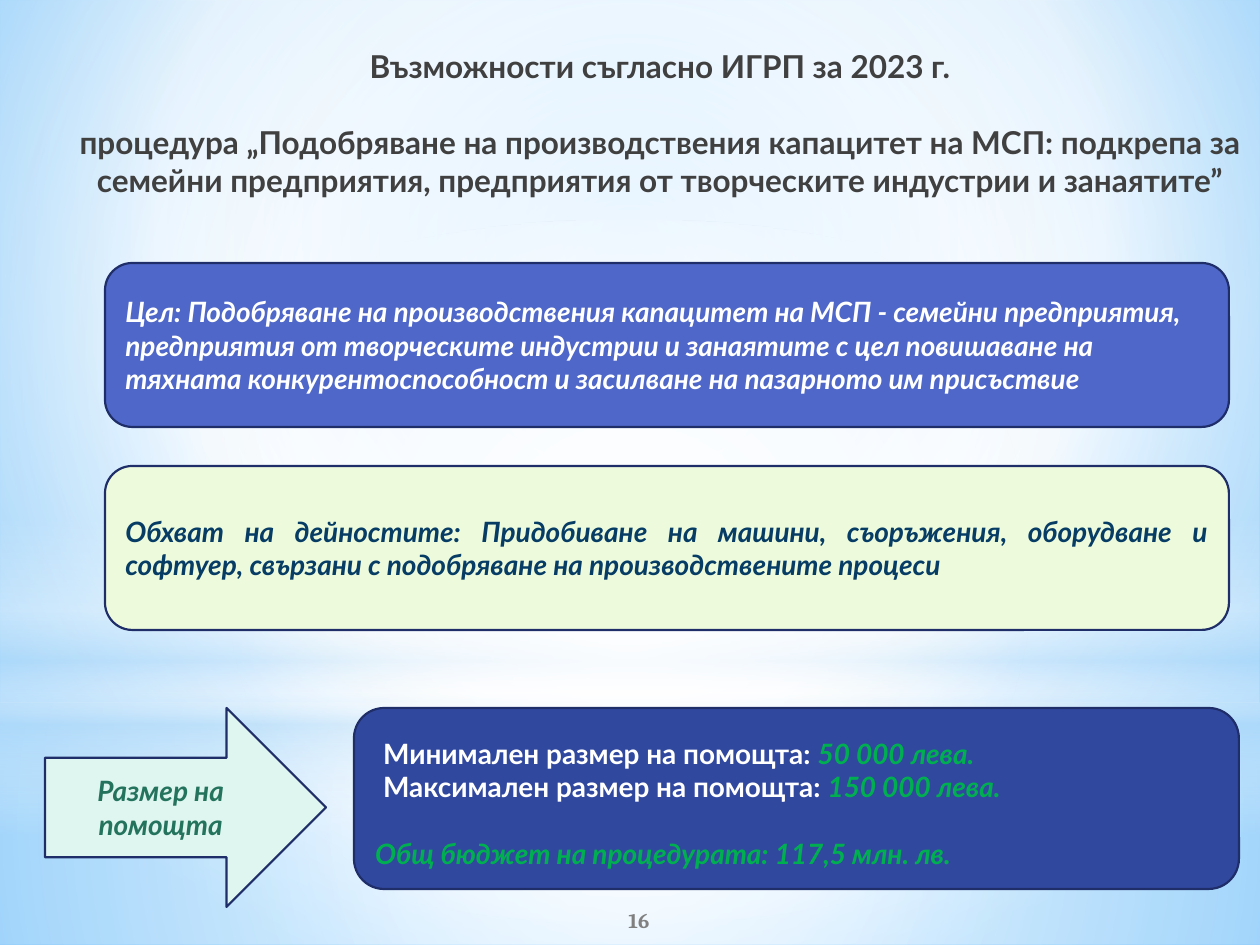
from lxml.etree import SubElement
from pptx import Presentation
from pptx.dml.color import RGBColor
from pptx.enum.shapes import MSO_SHAPE
from pptx.enum.text import MSO_ANCHOR, PP_ALIGN
from pptx.oxml.ns import qn
from pptx.util import Emu, Pt

SLIDE_SIZE = (1260, 945)
CENTER = (50, 50, 50, 50)
OUTLINE = "1F2E69"

BACKDROP = ([(0, "9ED5FF", 100), (60, "FFFFFF", 100), (100, "5BB9FF", 100)], (20, 10, 20, 60))
GLOWS = [
    (MSO_SHAPE.RECTANGLE, (0, 703, 1260, 242),
     [(0, "FFFFFF", 91), (37, "FFFFFF", 76), (100, "B4DCFA", 79)], CENTER),
    (MSO_SHAPE.RECTANGLE, (0, 0, 1260, 703),
     [(0, "FFFFFF", 89), (48, "FFFFFF", 62), (100, "B4DCFA", 79)], CENTER),
    (MSO_SHAPE.RECTANGLE, (0, 519, 1260, 315),
     [(0, "FFFFFF", 0), (29, "FFFFFF", 30), (45, "B4DCFA", 40),
      (55, "FFFFFF", 26), (65, "B4DCFA", 60), (100, "FFFFFF", 0)], None),
    (MSO_SHAPE.OVAL, (0, 220, 1260, 703),
     [(0, "FFFFFF", 100), (56, "FFFFFF", 0)], CENTER),
]

LATO = {"name": "Lato", "size": Pt(16), "bold": True, "color": "FFFFFF"}
ITALIC = {**LATO, "italic": True}
TITLE = {**LATO, "size": Pt(18), "color": "404040"}
GREEN = {**ITALIC, "color": "00B050"}
NUMBER = {**LATO, "name": "Cambria", "size": Pt(12), "color": "808080"}
LEFT = {"alignment": PP_ALIGN.LEFT}
CENTERED = {"alignment": PP_ALIGN.CENTER}
JUSTIFIED = {"alignment": PP_ALIGN.JUSTIFY}

PANELS = [
    (MSO_SHAPE.ROUNDED_RECTANGLE, (105, 263, 1124, 164), "4E67C8", {}, [
        (LEFT, 0, [("Цел: Подобряване на производствения капацитет на МСП - семейни предприятия, "
                    "предприятия от творческите индустрии и занаятите с цел повишаване на "
                    "тяхната конкурентоспособност и засилване на пазарното им присъствие", ITALIC)])]),
    (MSO_SHAPE.ROUNDED_RECTANGLE, (105, 466, 1124, 164), "EDFBDC", {}, [
        (JUSTIFIED, 0, [("Обхват на дейностите: Придобиване на машини, съоръжения, оборудване и "
                         "софтуер, свързани с подобряване на производствените процеси",
                         {**ITALIC, "color": "073C65"})])]),
    (MSO_SHAPE.RIGHT_ARROW, (45, 708, 281, 199), "DFF5EF", {}, [
        (CENTERED, 0, [("Размер на помощта", {**ITALIC, "color": "23735D"})])]),
    (MSO_SHAPE.ROUNDED_RECTANGLE, (354, 708, 885, 181), "31489F", {"margin_top": 16}, [
        (LEFT, 8, [("Минимален размер на помощта: ", LATO), ("50 000 лева.", GREEN)]),
        (LEFT, 8, [("Максимален размер на помощта: ", LATO), ("150 000 лева.", GREEN)]),
        ({**LEFT, "space_before": Pt(19)}, 0,
         [("Общ бюджет на процедурата: 117,5 млн. лв.", GREEN)])]),
]
CAPTIONS = [
    ((60, 4, 1200, 239), MSO_ANCHOR.TOP, {"margin_top": 43}, [
        (CENTERED, 0, [("Възможности съгласно ИГРП за 2023 г.", TITLE)]),
        ({**CENTERED, "space_before": Pt(22)}, 0,
         [("процедура „Подобряване на производствения капацитет на МСП: подкрепа за "
           "семейни предприятия, предприятия от творческите индустрии и занаятите”", TITLE)])]),
    ((513, 895, 252, 50), MSO_ANCHOR.MIDDLE, {}, [(CENTERED, 0, [("16", NUMBER)])]),
]


def px(length):
    return Emu(round(length * 914400 / 126))


def rgb(value):
    return RGBColor.from_string(value)


def apply(target, values):
    for key, value in values.items():
        setattr(target, key, value)


def set_gradient(fill, holder, stops, focus):
    fill.solid()
    solid = holder.find(qn("a:solidFill"))
    gradient = holder.makeelement(qn("a:gradFill"), {"rotWithShape": "1"})
    stop_list = SubElement(gradient, qn("a:gsLst"))
    for position, color, opacity in stops:
        stop = SubElement(stop_list, qn("a:gs"), pos=str(position * 1000))
        tint = SubElement(stop, qn("a:srgbClr"), val=color)
        if opacity < 100:
            SubElement(tint, qn("a:alpha"), val=str(opacity * 1000))
    if focus:
        circle = SubElement(gradient, qn("a:path"), {"path": "circle"})
        sides = {side: str(share * 1000) for side, share in zip("ltrb", focus)}
        SubElement(circle, qn("a:fillToRect"), sides)
    else:
        SubElement(gradient, qn("a:lin"), ang="5400000", scaled="0")
    holder.replace(solid, gradient)


def write(frame, anchor, margins, paragraphs):
    apply(frame, {"word_wrap": True, "vertical_anchor": anchor})
    apply(frame, {side: px(length) for side, length in margins.items()})
    for index, (layout, indent, runs) in enumerate(paragraphs):
        paragraph = frame.add_paragraph() if index else frame.paragraphs[0]
        apply(paragraph, layout)
        if indent:
            paragraph._p.get_or_add_pPr().set("marL", str(px(indent)))
        for words, style in runs:
            run = paragraph.add_run()
            run.text = words
            apply(run.font, {key: value for key, value in style.items() if key != "color"})
            run.font.color.rgb = rgb(style["color"])


def main():
    deck = Presentation()
    deck.slide_width, deck.slide_height = map(px, SLIDE_SIZE)
    slide = deck.slides.add_slide(deck.slide_layouts[6])

    backdrop = slide.background.fill
    backdrop.solid()
    set_gradient(backdrop, slide.element.find(".//" + qn("p:bgPr")), *BACKDROP)

    for outline, box, stops, focus in GLOWS:
        glow = slide.shapes.add_shape(outline, *map(px, box))
        glow.shadow.inherit = False
        glow.line.fill.background()
        set_gradient(glow.fill, glow._element.spPr, stops, focus)

    for outline, box, color, margins, paragraphs in PANELS:
        panel = slide.shapes.add_shape(outline, *map(px, box))
        panel.shadow.inherit = False
        panel.fill.solid()
        panel.fill.fore_color.rgb = rgb(color)
        panel.line.color.rgb = rgb(OUTLINE)
        panel.line.width = Pt(1.25)
        write(panel.text_frame, MSO_ANCHOR.MIDDLE, margins, paragraphs)

    for box, anchor, margins, paragraphs in CAPTIONS:
        caption = slide.shapes.add_textbox(*map(px, box))
        write(caption.text_frame, anchor, margins, paragraphs)

    deck.save("out.pptx")


if __name__ == "__main__":
    main()
